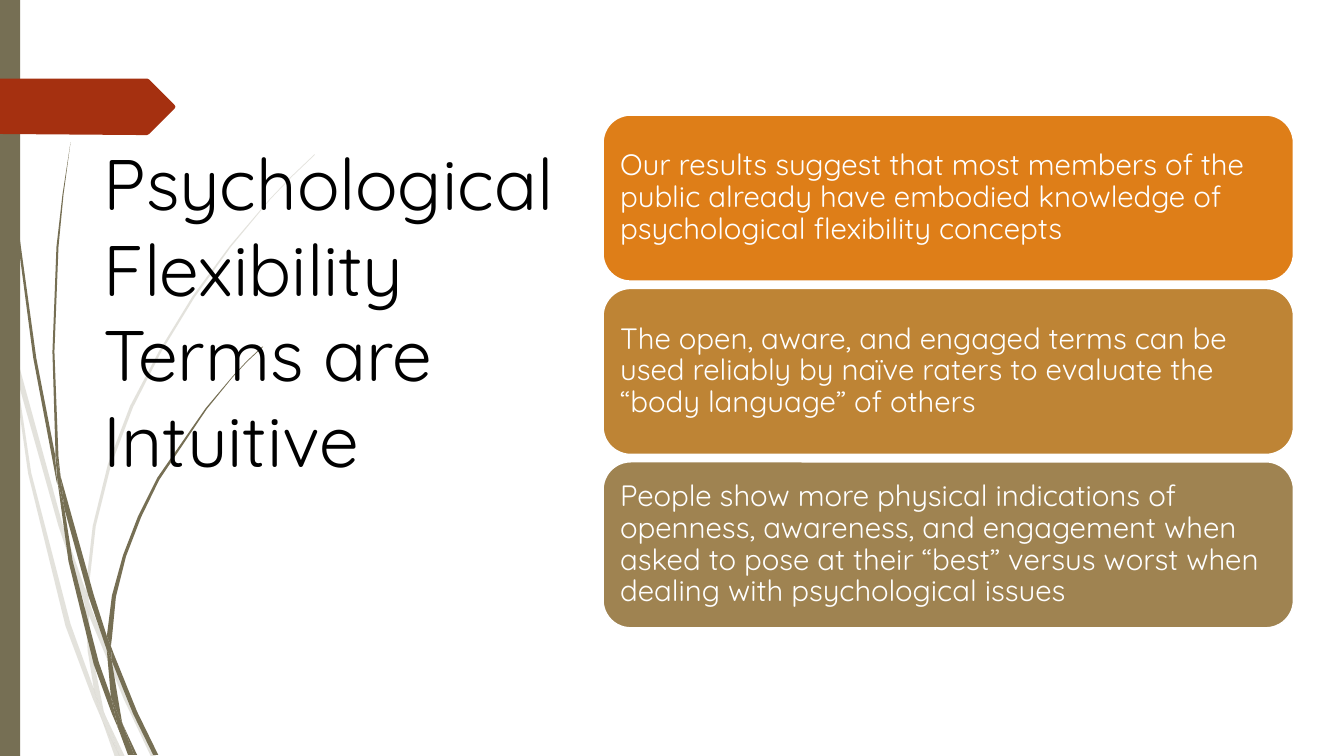
import pptx
import pptx.dml.color
import pptx.enum.shapes
import pptx.enum.text
import pptx.oxml
import pptx.oxml.ns
import pptx.util
from pptx.util import Inches

FONT = "Quicksand"
OLIVE = "766F54"
RUST = "A53010"
BLACK = "000000"
WHITE = "FFFFFF"

PALE_GRASS = [
    [(0.11, 3.5), (0.09, 3.22), (0, 2.82), (0, 2.99), (0.1, 3.44)],
    [(0.58, 5.22), (0.84, 5.99), (0.85, 5.86), (0.62, 5.2), (0.14, 3.45), (0.17, 3.76)],
    [(0.92, 6.07), (0.88, 5.96), (0.88, 6.1), (1.23, 6.94), (1.5, 7.51), (1.55, 7.51), (1.27, 6.92)],
    [(1.19, 7.51), (1.24, 7.51), (1.05, 7.11)],
    [(0.93, 6.83), (0.7, 6.19), (0.31, 4.69), (0.17, 3.76), (0.11, 3.5), (0.28, 4.7),
     (0.65, 6.21), (0.92, 6.93), (1.01, 7.14), (0.99, 7.07)],
    [(0.84, 5.99), (0.87, 6.46), (0.93, 6.83), (0.96, 6.92), (1.05, 7.11), (1.03, 7.06),
     (0.91, 6.46), (0.88, 6.1), (0.88, 6.08)],
    [(0.88, 5.84), (0.95, 5.22), (1.1, 4.62), (1.32, 4.04), (1.6, 3.49), (1.93, 2.95), (2.29, 2.45),
     (2.68, 1.98), (2.9, 1.75), (3.12, 1.54), (3.12, 1.53), (2.89, 1.75), (2.68, 1.97), (2.28, 2.44),
     (1.91, 2.94), (1.58, 3.48), (1.29, 4.03), (1.07, 4.61), (0.92, 5.22), (0.85, 5.84),
     (0.85, 5.86), (0.88, 5.96)],
    [(1.01, 7.14), (1.14, 7.51), (1.19, 7.51)],
    [(0.88, 6.08), (0.88, 6.1), (0.88, 5.96), (0.85, 5.86), (0.84, 5.99)],
    [(0.96, 6.92), (0.93, 6.83), (0.99, 7.07), (1.01, 7.14), (1.19, 7.51), (1.05, 7.11)],
]

DARK_GRASS = [
    [(0.07, 1.1), (0.17, 2.33), (0.33, 3.55), (0.56, 4.77), (0.57, 4.81), (0.55, 4.57), (0.55, 4.53),
     (0.36, 3.55), (0.19, 2.32), (0.08, 1.09), (0.05, 0.48), (0.04, 0), (0.03, 0), (0.04, 0.48)],
    [(0.88, 5.92), (1.06, 6.45), (1.06, 6.33), (1.06, 6.31), (0.93, 5.9), (0.6, 4.72), (0.64, 5.05)],
    [(1.13, 6.49), (1.1, 6.41), (1.11, 6.56), (1.32, 7.08), (1.52, 7.49), (1.57, 7.49), (1.36, 7.06)],
    [(1.1, 6.91), (0.98, 6.57), (0.72, 5.56), (0.64, 5.05), (0.57, 4.77), (0.68, 5.57),
     (0.93, 6.59), (1.11, 7.08), (1.17, 7.22), (1.16, 7.17)],
    [(0.6, 4.72), (0.58, 4.53), (0.54, 3.49), (0.58, 2.45), (0.63, 1.93), (0.7, 1.41),
     (0.62, 1.93), (0.56, 2.45), (0.52, 3.49), (0.55, 4.49)],
    [(1.33, 7.49), (1.36, 7.49), (1.22, 7.19)],
    [(0.57, 4.77), (0.64, 5.05), (0.6, 4.72), (0.55, 4.49), (0.55, 4.53)],
    [(1.11, 6.33), (1.15, 5.92), (1.25, 5.52), (1.4, 5.13), (1.58, 4.76), (2.05, 4.06), (2.31, 3.74),
     (2.45, 3.59), (2.61, 3.44), (2.6, 3.44), (2.45, 3.58), (2.31, 3.73), (2.04, 4.05), (1.56, 4.74),
     (1.37, 5.12), (1.22, 5.51), (1.11, 5.91), (1.06, 6.31), (1.1, 6.41)],
    [(1.17, 7.22), (1.27, 7.49), (1.31, 7.49)],
    [(1.06, 6.45), (1.1, 6.91), (1.16, 7.06), (1.22, 7.19), (1.21, 7.16), (1.11, 6.56), (1.09, 6.51)],
    [(1.06, 6.45), (1.09, 6.51), (1.11, 6.56), (1.1, 6.41), (1.06, 6.31), (1.06, 6.33)],
    [(1.16, 7.06), (1.1, 6.91), (1.16, 7.17), (1.17, 7.22), (1.3, 7.49), (1.33, 7.49), (1.22, 7.19)],
]

ARROW_TAG = [(1.74, 1.06), (1.73, 1.08), (1.48, 1.33), (1.46, 1.34), (1.36, 1.34), (0, 1.33),
             (0, 0.78), (1.46, 0.78), (1.48, 0.79), (1.73, 1.04)]

CARDS = [
    ("DE7E18", "Our results suggest that most members of the public already have embodied "
               "knowledge of psychological flexibility concepts"),
    ("BE8435", "The open, aware, and engaged terms can be used reliably by naïve raters to "
               "evaluate the “body language” of others"),
    ("9F8351", "People show more physical indications of openness, awareness, and engagement when "
               "asked to pose at their “best” versus worst when dealing with psychological issues"),
]


def color(value):
    return pptx.dml.color.RGBColor.from_string(value)


class SlideBuilder:
    def __init__(self, slide, font):
        self.slide = slide
        self.font = font

    def paint(self, shape, fill, line=None, alpha=None):
        shape.shadow.inherit = False
        shape.fill.solid()
        shape.fill.fore_color.rgb = color(fill)
        if alpha is not None:
            tint = shape.element.find(".//" + pptx.oxml.ns.qn("a:srgbClr"))
            tint.append(pptx.oxml.parse_xml(
                f'<a:alpha {pptx.oxml.ns.nsdecls("a")} val="{alpha * 1000}"/>'))
        if line:
            shape.line.color.rgb = color(line)
            shape.line.width = pptx.util.Pt(1.25)
        else:
            shape.line.fill.background()

    def outline(self, points, fill, alpha=None):
        corners = [(Inches(x), Inches(y)) for x, y in points]
        builder = self.slide.shapes.build_freeform(*corners[0])
        builder.add_line_segments(corners[1:], close=True)
        self.paint(builder.convert_to_shape(), fill, alpha=alpha)

    def box(self, kind, left, top, width, height, fill, line=None):
        shape = self.slide.shapes.add_shape(kind, Inches(left), Inches(top), Inches(width), Inches(height))
        self.paint(shape, fill, line)
        return shape

    def add_text(self, shape, text, size, text_color, anchor, spacing=None):
        frame = shape.text_frame
        frame.word_wrap = True
        frame.vertical_anchor = anchor
        paragraph = frame.paragraphs[0]
        paragraph.alignment = pptx.enum.text.PP_ALIGN.LEFT
        paragraph.line_spacing = spacing
        run = paragraph.add_run()
        run.text = text
        run.font.name = self.font
        run.font.size = pptx.util.Pt(size)
        run.font.color.rgb = color(text_color)

    def title(self, left, top, width, height, text):
        shape = self.slide.shapes.add_textbox(Inches(left), Inches(top), Inches(width), Inches(height))
        self.add_text(shape, text, 51, BLACK, pptx.enum.text.MSO_ANCHOR.TOP)

    def card(self, left, top, width, height, fill, text):
        shape = self.box(pptx.enum.shapes.MSO_SHAPE.ROUNDED_RECTANGLE, left, top, width, height, fill, WHITE)
        frame = shape.text_frame
        frame.margin_left = frame.margin_right = frame.margin_top = frame.margin_bottom = Inches(0.09)
        self.add_text(shape, text, 21, WHITE, pptx.enum.text.MSO_ANCHOR.MIDDLE, 0.9)


def main():
    presentation = pptx.Presentation()
    presentation.slide_width = Inches(13.33)
    presentation.slide_height = Inches(7.5)
    builder = SlideBuilder(presentation.slides.add_slide(presentation.slide_layouts[6]), FONT)
    for blades, alpha in ((PALE_GRASS, 20), (DARK_GRASS, None)):
        for blade in blades:
            builder.outline(blade, OLIVE, alpha)
    builder.box(pptx.enum.shapes.MSO_SHAPE.RECTANGLE, 0, 0, 0.2, 7.5, OLIVE)
    builder.outline(ARROW_TAG, RUST)
    builder.title(0.93, 1.33, 5.21, 6.02, "Psychological Flexibility Terms are Intuitive")
    for index, (fill, text) in enumerate(CARDS):
        builder.card(5.98, 1.14 + index * 1.72, 6.85, 1.65, fill, text)
    presentation.save("out.pptx")


if __name__ == "__main__":
    main()
